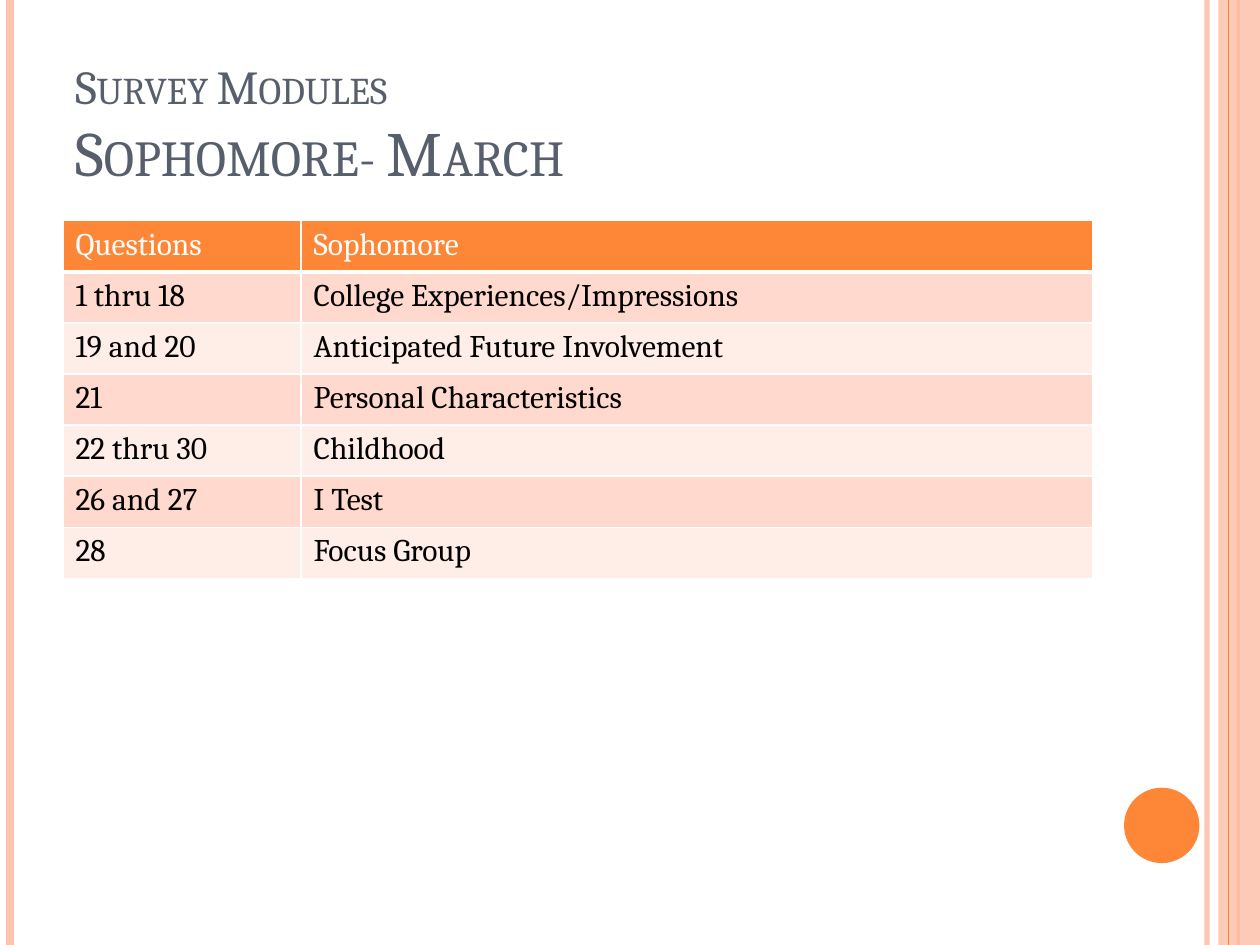
import pptx
import pptx.dml.color
import pptx.enum.shapes
import pptx.enum.text
import pptx.oxml
import pptx.oxml.ns
import pptx.util
from pptx.util import Cm

WIDTH, HEIGHT = 25.4, 19.05
ORANGE, PEACH, SLATE = "FE8637", "FEC3AE", "575F6D"
WHITE, BLACK = "FFFFFF", "000000"
BANDS = ["FFD9CE", "FFEDE8"]


def colour(code):
    return pptx.dml.color.RGBColor.from_string(code)


def add_alpha(fill_parent, percent):
    tone = fill_parent.find(".//" + pptx.oxml.ns.qn("a:srgbClr"))
    alpha = pptx.oxml.parse_xml(
        f'<a:alpha {pptx.oxml.ns.nsdecls("a")} val="{percent * 1000}"/>')
    tone.append(alpha)


class SlideBuilder:
    def __init__(self, page, font):
        self.page = page
        self.font = font

    def rule(self, x, code, points, opacity=100):
        """Full-height vertical line."""
        line = self.page.shapes.add_connector(
            pptx.enum.shapes.MSO_CONNECTOR.STRAIGHT, Cm(x), 0, Cm(x), Cm(HEIGHT))
        line.line.color.rgb = colour(code)
        line.line.width = pptx.util.Pt(points)
        properties = line._element.spPr
        if opacity < 100:
            add_alpha(properties, opacity)
        properties.append(pptx.oxml.parse_xml(
            f'<a:effectLst {pptx.oxml.ns.nsdecls("a")}/>'))

    def shape(self, kind, left, top, width, height, code, opacity=100):
        shape = self.page.shapes.add_shape(
            kind, Cm(left), Cm(top), Cm(width), Cm(height))
        shape.shadow.inherit = False
        shape.fill.solid()
        shape.fill.fore_color.rgb = colour(code)
        shape.line.fill.background()
        if opacity < 100:
            add_alpha(shape._element.spPr, opacity)

    def span(self, para, text, size, code):
        span = para.add_run()
        span.text = text
        span.font.name = self.font
        span.font.size = pptx.util.Pt(size)
        span.font.color.rgb = colour(code)
        return span

    def title(self, left, top, width, height, lines, code):
        """Small-caps lines in one paragraph, set on the bottom of the box."""
        box = self.page.shapes.add_textbox(Cm(left), Cm(top), Cm(width), Cm(height))
        frame = box.text_frame
        frame.word_wrap = True
        frame.vertical_anchor = pptx.enum.text.MSO_ANCHOR.BOTTOM
        para = frame.paragraphs[0]
        for index, (text, size) in enumerate(lines):
            if index:
                para.add_line_break()
            span = self.span(para, text, size, code)
            span._r.get_or_add_rPr().set("cap", "small")

    def border(self, cell, bottom):
        for side in "LRTB":
            points = bottom if side == "B" else 1
            cell._tc.get_or_add_tcPr().append(pptx.oxml.parse_xml(
                f'<a:ln{side} {pptx.oxml.ns.nsdecls("a")} w="{points * 12700}">'
                f'<a:solidFill><a:srgbClr val="{WHITE}"/></a:solidFill>'
                f'</a:ln{side}>'))

    def table(self, left, top, widths, row_height, rows, size):
        table = self.page.shapes.add_table(
            len(rows), len(widths), Cm(left), Cm(top),
            Cm(sum(widths)), Cm(row_height * len(rows))).table
        for column, width in zip(table.columns, widths):
            column.width = Cm(width)
        for r, texts in enumerate(rows):
            table.rows[r].height = Cm(row_height)
            header = r == 0
            for c, text in enumerate(texts):
                cell = table.cell(r, c)
                self.border(cell, 3 if header else 1)
                cell.fill.solid()
                cell.fill.fore_color.rgb = colour(
                    ORANGE if header else BANDS[(r - 1) % 2])
                span = self.span(cell.text_frame.paragraphs[0], text, size,
                                 WHITE if header else BLACK)
                span.font.bold = False


def main():
    deck = pptx.Presentation()
    deck.slide_width, deck.slide_height = Cm(WIDTH), Cm(HEIGHT)
    page = deck.slides.add_slide(deck.slide_layouts[6])
    builder = SlideBuilder(page, "Cambria")
    kinds = pptx.enum.shapes.MSO_SHAPE

    # Side stripes and the circle
    builder.rule(24.33, PEACH, 3, 93)
    builder.rule(0.2, PEACH, 4.5)
    builder.rule(24.97, ORANGE, 1.5)
    builder.shape(kinds.RECTANGLE, 24.56, 0, WIDTH - 24.56, HEIGHT, PEACH, 87)
    builder.rule(24.77, ORANGE, 0.75)
    builder.shape(kinds.OVAL, 22.66, 15.88, 1.52, 1.52, ORANGE)

    # Title
    builder.title(1.27, 0.76, 20.75, 3.18,
                  [("Survey Modules", 27), ("Sophomore- March", 36)], SLATE)

    # Survey modules by question
    builder.table(1.27, 4.45, [4.8, 15.95], 1.03, [
        ("Questions", "Sophomore"),
        ("1 thru 18", "College Experiences/Impressions"),
        ("19 and 20", "Anticipated Future Involvement"),
        ("21", "Personal Characteristics"),
        ("22 thru 30", "Childhood"),
        ("26 and 27", "I Test"),
        ("28", "Focus Group"),
    ], 18)

    deck.save("out.pptx")


if __name__ == "__main__":
    main()
